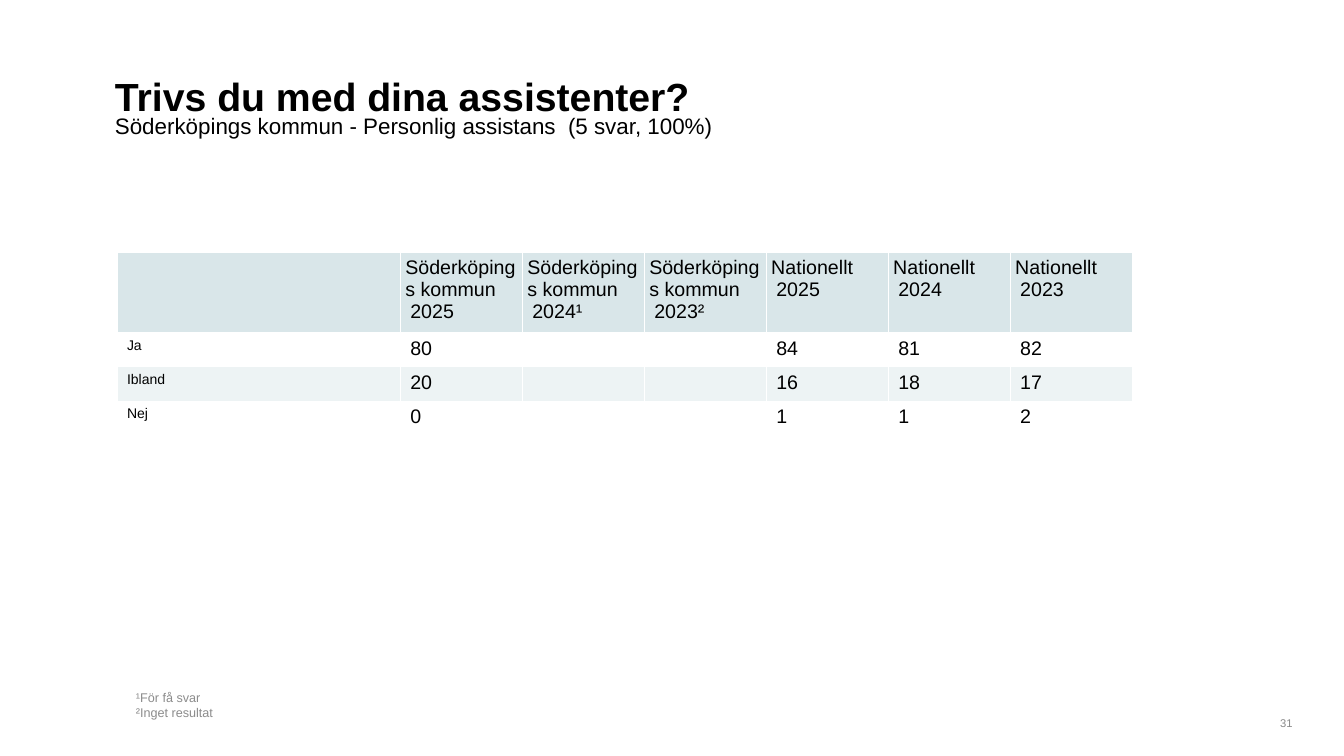
from dataclasses import dataclass

from lxml import etree
from pptx import Presentation
from pptx.dml.color import RGBColor
from pptx.enum.text import MSO_ANCHOR, MSO_AUTO_SIZE, PP_ALIGN
from pptx.oxml.ns import qn
from pptx.util import Inches, Pt

TOP, BOTTOM = MSO_ANCHOR.TOP, MSO_ANCHOR.BOTTOM
LEFT, RIGHT = PP_ALIGN.LEFT, PP_ALIGN.RIGHT
FIXED_SIZE = MSO_AUTO_SIZE.NONE


@dataclass(frozen=True)
class Theme:
    font: str = "Arial"
    ink: str = "000000"
    note: str = "8C8C8C"
    number: str = "898989"
    header: str = "D9E6E9"
    band: str = "EDF3F4"
    border: str = "FFFFFF"
    title_size: int = 28
    subtitle_size: int = 16
    value_size: int = 14
    label_size: int = 10
    note_size: int = 9
    number_size: int = 8


THEME = Theme()

MUNICIPALITY = "Söderköpings kommun"
NATIONAL = "Nationellt"
HEADINGS = [
    (MUNICIPALITY, "2025"),
    (MUNICIPALITY, "2024¹"),
    (MUNICIPALITY, "2023²"),
    (NATIONAL, "2025"),
    (NATIONAL, "2024"),
    (NATIONAL, "2023"),
]
ANSWERS = [
    ("Ja", "80", "", "", "84", "81", "82"),
    ("Ibland", "20", "", "", "16", "18", "17"),
    ("Nej", "0", "", "", "1", "1", "2"),
]
LABEL_WIDTH, VALUE_WIDTH = 2.81, 1.21
HEADER_HEIGHT, ANSWER_HEIGHT = 0.8, 0.34
CELL_INSET = 0.05


def set_attributes(target, values):
    for name, value in values.items():
        setattr(target, name, value)


def format_paragraph(para, size, color=THEME.ink, bold=False, align=LEFT):
    set_attributes(para, {"alignment": align, "space_before": Pt(0)})
    set_attributes(para.font, {"name": THEME.font, "size": Pt(size), "bold": bold})
    para.font.color.rgb = RGBColor.from_string(color)


def fill_frame(frame, lines, anchor, **style):
    set_attributes(frame, {
        "word_wrap": True,
        "auto_size": FIXED_SIZE,
        "vertical_anchor": anchor,
    })
    frame.text = "\n".join(lines)
    for para in frame.paragraphs:
        format_paragraph(para, **style)


def place_heading(placeholder, text, top, inset, **style):
    set_attributes(placeholder, {
        "left": Inches(1.04),
        "top": Inches(top),
        "width": Inches(11.25),
        "height": Inches(0.42),
    })
    fill_frame(placeholder.text_frame, [text], TOP, **style)
    placeholder.text_frame.margin_top = Inches(inset)


def add_text(page, lines, left, top, width, height, **style):
    box = page.shapes.add_textbox(
        Inches(left), Inches(top), Inches(width), Inches(height))
    fill_frame(box.text_frame, lines, BOTTOM, **style)


def add_borders(cell):
    properties = cell._tc.get_or_add_tcPr()
    for position, side in enumerate(("lnL", "lnR", "lnT", "lnB")):
        line = etree.Element(qn(f"a:{side}"), w=str(Pt(1)))
        solid = etree.SubElement(line, qn("a:solidFill"))
        etree.SubElement(solid, qn("a:srgbClr"), val=THEME.border)
        properties.insert(position, line)


def fill_cell(cell, lines, size, fill):
    sides = ("left", "right", "top", "bottom")
    set_attributes(cell, {f"margin_{side}": Inches(CELL_INSET) for side in sides})
    cell.text = "\n".join(lines)
    for para in cell.text_frame.paragraphs:
        format_paragraph(para, size)
    para._p.get_or_add_pPr().set("marL", str(Inches(CELL_INSET)))
    if fill:
        cell.fill.solid()
        cell.fill.fore_color.rgb = RGBColor.from_string(fill)
    else:
        cell.fill.background()
    add_borders(cell)


def add_answer_table(page):
    rows = [[("",), *HEADINGS]]
    rows += [[(value,) for value in answer] for answer in ANSWERS]
    widths = [LABEL_WIDTH] + [VALUE_WIDTH] * len(HEADINGS)
    heights = [HEADER_HEIGHT] + [ANSWER_HEIGHT] * len(ANSWERS)
    table = page.shapes.add_table(
        len(rows), len(widths), Inches(1.16), Inches(2.5),
        Inches(sum(widths)), Inches(sum(heights))).table
    set_attributes(table, {"first_row": False, "horz_banding": False})
    for column, width in zip(table.columns, widths):
        column.width = Inches(width)
    for row, height in zip(table.rows, heights):
        row.height = Inches(height)
    for row_index, row in enumerate(rows):
        if row_index == 0:
            fill = THEME.header
        else:
            fill = THEME.band if row_index % 2 == 0 else None
        for column_index, lines in enumerate(row):
            size = THEME.value_size if column_index else THEME.label_size
            fill_cell(table.cell(row_index, column_index), lines, size, fill)


def main():
    deck = Presentation()
    set_attributes(deck, {
        "slide_width": Inches(13.33),
        "slide_height": Inches(7.5),
    })
    page = deck.slides.add_slide(deck.slide_layouts[0])
    place_heading(page.shapes.title, "Trivs du med dina assistenter?",
                  0.62, 0.1, size=THEME.title_size, bold=True)
    place_heading(page.placeholders[1],
                  "Söderköpings kommun - Personlig assistans  (5 svar, 100%)",
                  1.04, 0.07, size=THEME.subtitle_size)
    add_answer_table(page)
    add_text(page, ["¹För få svar", "²Inget resultat"], 1.25, 3.23, 7.6, 3.96,
             size=THEME.note_size, color=THEME.note)
    add_text(page, ["31"], 12.5, 7.08, 0.42, 0.21,
             size=THEME.number_size, color=THEME.number, align=RIGHT)
    deck.save("out.pptx")


if __name__ == "__main__":
    main()
